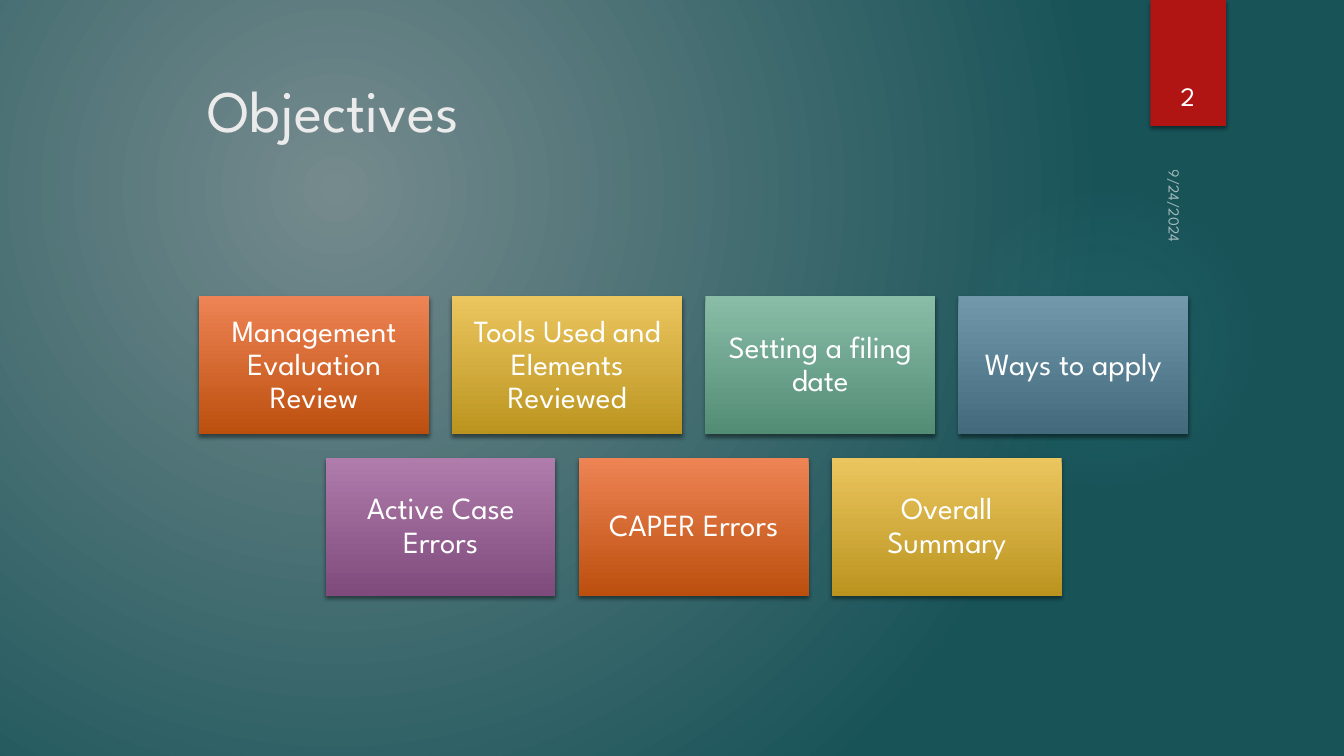
from dataclasses import dataclass

from lxml import etree
from pptx import Presentation
from pptx.dml.color import RGBColor
from pptx.enum.shapes import MSO_SHAPE
from pptx.enum.text import MSO_ANCHOR, PP_ALIGN
from pptx.oxml.ns import qn
from pptx.util import Inches, Pt

RECT, OVAL = MSO_SHAPE.RECTANGLE, MSO_SHAPE.OVAL
TOP, MIDDLE, BOTTOM = MSO_ANCHOR.TOP, MSO_ANCHOR.MIDDLE, MSO_ANCHOR.BOTTOM
LEFT, CENTER = PP_ALIGN.LEFT, PP_ALIGN.CENTER

FONT = "League Spartan"
WHITE = RGBColor(0xFF, 0xFF, 0xFF)
BLACK = RGBColor(0x00, 0x00, 0x00)
TITLE_GRAY = RGBColor(0xEB, 0xEB, 0xEB)
RED = RGBColor(0xB0, 0x15, 0x13)
GLOW = RGBColor(0x50, 0xB9, 0xC1)
BACK_LIGHT = RGBColor(0x75, 0x8A, 0x8D)
BACK_DARK = RGBColor(0x18, 0x53, 0x58)
ORANGE = (RGBColor(0xEE, 0x84, 0x55), RGBColor(0xBC, 0x4F, 0x0E))
GOLD = (RGBColor(0xEB, 0xC6, 0x5F), RGBColor(0xBB, 0x94, 0x1F))
GREEN = (RGBColor(0x89, 0xBD, 0xA7), RGBColor(0x53, 0x8C, 0x74))
BLUE = (RGBColor(0x71, 0x98, 0xAB), RGBColor(0x43, 0x6A, 0x7C))
PURPLE = (RGBColor(0xAF, 0x7C, 0xAC), RGBColor(0x7F, 0x4B, 0x7C))

TILE_W, TILE_H = 2.28, 1.37
PITCH_X, PITCH_Y = 2.51, 1.6
TILES_TOP, TILES_CENTER = 2.94, 6.88


@dataclass
class Tile:
    text: str
    colors: tuple[RGBColor, RGBColor]


@dataclass
class Stop:
    pos: int
    color: RGBColor
    alpha: int = 100


ROWS = [
    [
        Tile("Management Evaluation Review", ORANGE),
        Tile("Tools Used and Elements Reviewed", GOLD),
        Tile("Setting a filing date", GREEN),
        Tile("Ways to apply", BLUE),
    ],
    [
        Tile("Active Case Errors", PURPLE),
        Tile("CAPER Errors", ORANGE),
        Tile("Overall Summary", GOLD),
    ],
]


def add_color(parent, color: RGBColor, alpha: int) -> None:
    clr = etree.SubElement(parent, qn("a:srgbClr"), val=str(color))
    if alpha < 100:
        etree.SubElement(clr, qn("a:alpha"), val=str(alpha * 1000))


def set_gradient(fill, element, stops: list[Stop], focus: tuple = ()) -> None:
    fill.gradient()
    grad = next(element.iter(qn("a:gradFill")))
    for child in list(grad):
        grad.remove(child)
    stop_list = etree.SubElement(grad, qn("a:gsLst"))
    for stop in stops:
        gs = etree.SubElement(stop_list, qn("a:gs"), pos=str(stop.pos * 1000))
        add_color(gs, stop.color, stop.alpha)
    if focus:
        path = etree.SubElement(grad, qn("a:path"), path="circle")
        sides = {side: str(v * 1000) for side, v in zip("ltrb", focus)}
        etree.SubElement(path, qn("a:fillToRect"), sides)
    else:
        etree.SubElement(grad, qn("a:lin"), ang="5400000", scaled="0")


def add_shadow(sp) -> None:
    effects = sp._element.spPr.find(qn("a:effectLst"))
    shadow = etree.SubElement(
        effects, qn("a:outerShdw"), blurRad=str(Pt(3)), dist=str(Pt(2)),
        dir="5400000", rotWithShape="0")
    add_color(shadow, BLACK, 45)


def add_shape(slide, kind, x: float, y: float, w: float, h: float):
    sp = slide.shapes.add_shape(kind, Inches(x), Inches(y), Inches(w), Inches(h))
    sp.shadow.inherit = False
    sp.line.fill.background()
    return sp


def add_box(slide, x: float, y: float, w: float, h: float):
    return slide.shapes.add_textbox(Inches(x), Inches(y), Inches(w), Inches(h))


def write(sp, text: str, *, size: int, color: RGBColor = WHITE, alpha: int = 100,
          align=LEFT, anchor=TOP, spacing: float = 1.0, inset: float = 0) -> None:
    tf = sp.text_frame
    tf.word_wrap = True
    tf.vertical_anchor = anchor
    if inset:
        tf.margin_left = tf.margin_right = Inches(inset)
        tf.margin_top = tf.margin_bottom = Inches(inset)
    p = tf.paragraphs[0]
    p.alignment = align
    p.line_spacing = spacing
    r = p.add_run()
    r.text = text
    r.font.name = FONT
    r.font.size = Pt(size)
    r.font.color.rgb = color
    if alpha < 100:
        clr = next(r._r.iter(qn("a:srgbClr")))
        etree.SubElement(clr, qn("a:alpha"), val=str(alpha * 1000))


def add_tile(slide, tile: Tile, x: float, y: float) -> None:
    sp = add_shape(slide, RECT, x, y, TILE_W, TILE_H)
    top, bottom = tile.colors
    set_gradient(sp.fill, sp._element, [Stop(0, top), Stop(100, bottom)])
    add_shadow(sp)
    write(sp, tile.text, size=22, align=CENTER, anchor=MIDDLE, spacing=0.9, inset=0.09)


def add_backdrop(slide) -> None:
    set_gradient(slide.background.fill, slide._element,
                 [Stop(0, BACK_LIGHT), Stop(100, BACK_DARK)], (50, 50, 100, 100))
    glow = add_shape(slide, OVAL, 9.41, 1.83, 3.08, 3.08)
    set_gradient(glow.fill, glow._element,
                 [Stop(0, GLOW, 7), Stop(36, GLOW, 6), Stop(69, GLOW, 0)],
                 (50, 50, 50, 50))
    ribbon = add_shape(slide, RECT, 11.41, 0, 0.75, 1.25)
    ribbon.fill.solid()
    ribbon.fill.fore_color.rgb = RED
    add_shadow(ribbon)


def main() -> None:
    prs = Presentation()
    prs.slide_width, prs.slide_height = Inches(13.33), Inches(7.5)
    slide = prs.slides.add_slide(prs.slide_layouts[6])
    add_backdrop(slide)

    write(add_box(slide, 1.96, 0.68, 10.62, 1.4), "Objectives", size=42, color=TITLE_GRAY)

    for i, row in enumerate(ROWS):
        left = TILES_CENTER - ((len(row) - 1) * PITCH_X + TILE_W) / 2
        for j, tile in enumerate(row):
            add_tile(slide, tile, left + j * PITCH_X, TILES_TOP + i * PITCH_Y)

    date = add_box(slide, 11.11, 1.96, 1.08, 0.33)
    date.rotation = 90
    write(date, "9/24/2024", size=11, alpha=60, anchor=MIDDLE)
    write(add_box(slide, 11.32, 0.32, 0.92, 0.84), "2", size=19,
          align=CENTER, anchor=BOTTOM, spacing=0.9)

    prs.save("out.pptx")


if __name__ == "__main__":
    main()
